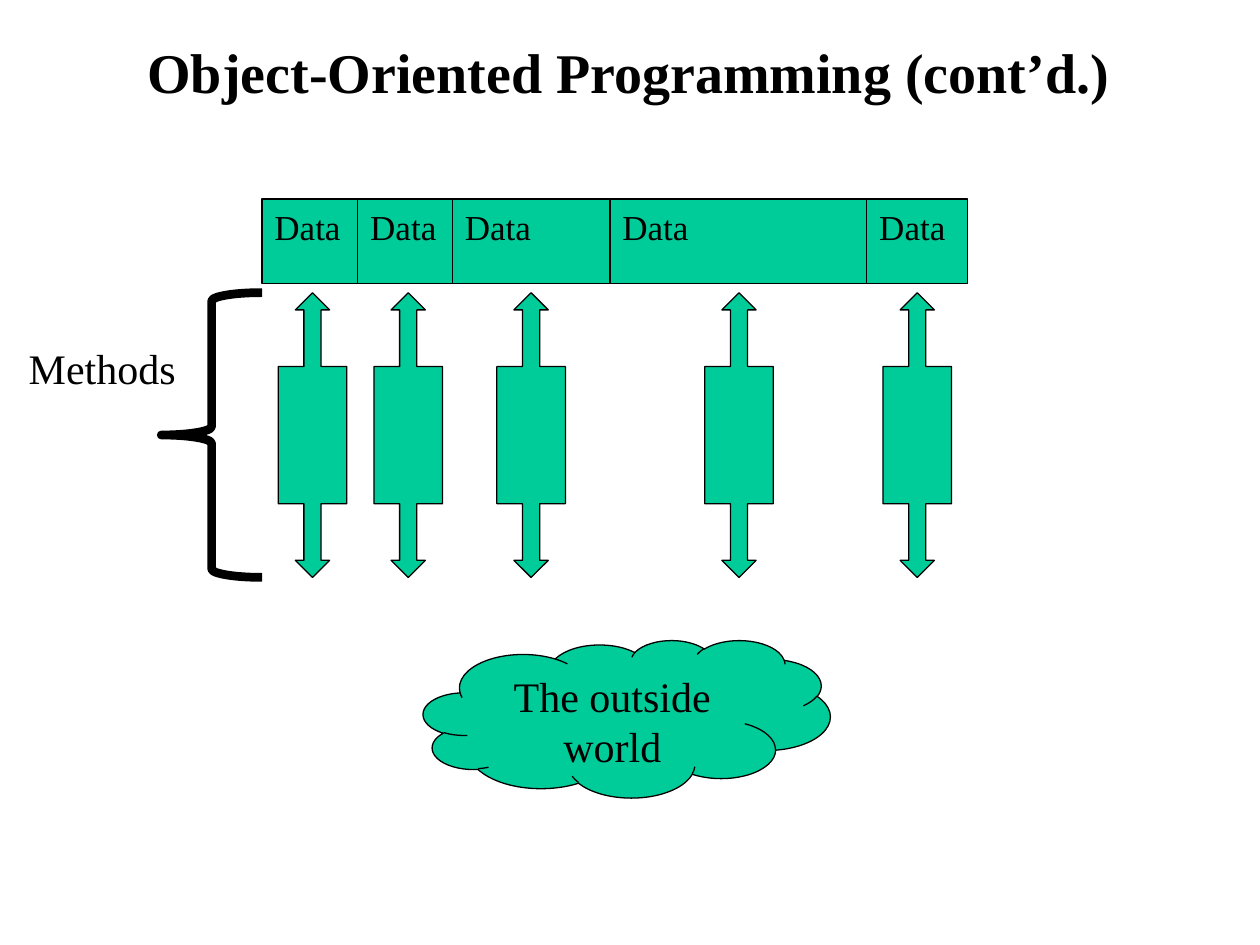
from dataclasses import dataclass

import pptx
import pptx.dml.color
import pptx.enum.shapes
import pptx.enum.text
import pptx.util

Pt = pptx.util.Pt
RGB = pptx.dml.color.RGBColor
SHAPE = pptx.enum.shapes.MSO_SHAPE
ANCHOR = pptx.enum.text.MSO_ANCHOR
ALIGN = pptx.enum.text.PP_ALIGN


@dataclass(frozen=True)
class Theme:
    font: str = "Times New Roman"
    ink: RGB = RGB(0x00, 0x00, 0x00)
    green: RGB = RGB(0x00, 0xCC, 0x99)
    title_size: float = 32
    label_size: float = 24
    data_size: float = 20
    outline: float = 0.75
    brace_line: float = 5


@dataclass(frozen=True)
class Box:
    left: float
    top: float
    width: float
    height: float

    @property
    def center_x(self) -> float:
        return self.left + self.width / 2

    def lengths(self) -> tuple:
        return Pt(self.left), Pt(self.top), Pt(self.width), Pt(self.height)


THEME = Theme()

DATA_TOP, DATA_HEIGHT = 113.76, 48.24
DATA_FIELDS = [
    Box(left, DATA_TOP, width, DATA_HEIGHT)
    for left, width in (
        (149.76, 57.6), (204.48, 57.6), (258.48, 90), (348.48, 147.6), (495.36, 57.6),
    )
]
METHOD_TOP, METHOD_LENGTH, METHOD_WIDTH = 167.25, 162.72, 39.2


def write(shape, text: str, size: float, align=ALIGN.LEFT,
          anchor=ANCHOR.TOP, bold: bool = False) -> None:
    """Put one formatted paragraph into a shape."""
    frame = shape.text_frame
    frame.text = text
    frame.word_wrap = True
    frame.vertical_anchor = anchor
    paragraph = frame.paragraphs[0]
    paragraph.alignment = align
    font = paragraph.runs[0].font
    font.name, font.size, font.bold = THEME.font, Pt(size), bold
    font.color.rgb = THEME.ink


def draw(slide, kind, box: Box, line: float = THEME.outline, filled: bool = True):
    """Draw a preset shape with the slide's outline and fill."""
    shape = slide.shapes.add_shape(kind, *box.lengths())
    shape.shadow.inherit = False
    if filled:
        shape.fill.solid()
        shape.fill.fore_color.rgb = THEME.green
    else:
        shape.fill.background()
    shape.line.color.rgb = THEME.ink
    shape.line.width = Pt(line)
    return shape


def draw_method(slide, center_x: float) -> None:
    """Draw an upright two-way callout, turned from its horizontal form."""
    center_y = METHOD_TOP + METHOD_LENGTH / 2
    box = Box(center_x - METHOD_LENGTH / 2, center_y - METHOD_WIDTH / 2,
              METHOD_LENGTH, METHOD_WIDTH)
    draw(slide, SHAPE.LEFT_RIGHT_ARROW_CALLOUT, box).rotation = 270


def main() -> None:
    deck = pptx.Presentation()
    deck.slide_width, deck.slide_height = Pt(720), Pt(540)
    slide = deck.slides.add_slide(deck.slide_layouts[5])

    # Title
    title = slide.shapes.title
    title.left, title.top, title.width, title.height = Box(53.28, 4.32, 612, 72.72).lengths()
    write(title, "Object-Oriented Programming (cont’d.)", THEME.title_size,
          ALIGN.CENTER, ANCHOR.MIDDLE, bold=True)

    # Row of data fields
    for field in DATA_FIELDS:
        write(draw(slide, SHAPE.RECTANGLE, field), "Data", THEME.data_size)

    # One method below the middle of each field
    for field in DATA_FIELDS:
        draw_method(slide, field.center_x)

    # Brace and its label
    draw(slide, SHAPE.LEFT_BRACE, Box(92.16, METHOD_TOP, 57.6, METHOD_LENGTH),
         THEME.brace_line, filled=False)
    methods = slide.shapes.add_textbox(*Box(9.36, 192.24, 98.64, 36).lengths())
    write(methods, "Methods", THEME.label_size)

    # Outside world
    cloud = draw(slide, SHAPE.CLOUD, Box(241.92, 365.76, 232.56, 90))
    write(cloud, "The outside world", THEME.label_size, ALIGN.CENTER)

    deck.save("out.pptx")


if __name__ == "__main__":
    main()
